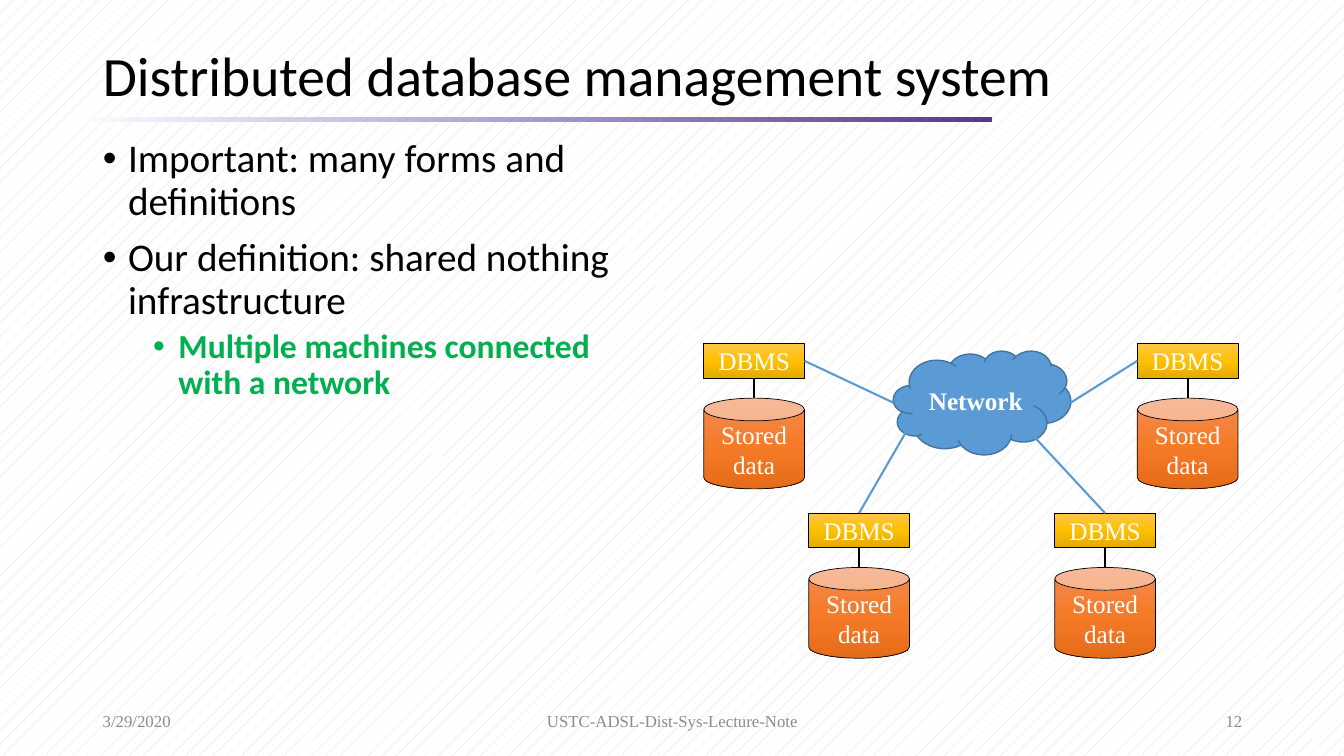
from dataclasses import dataclass

from lxml.etree import SubElement
from pptx import Presentation
from pptx.dml.color import RGBColor
from pptx.enum.dml import MSO_PATTERN
from pptx.enum.shapes import MSO_CONNECTOR, MSO_SHAPE
from pptx.enum.text import MSO_ANCHOR, MSO_AUTO_SIZE, PP_ALIGN
from pptx.oxml.ns import qn
from pptx.util import Inches, Pt

TITLE = "Distributed database management system"
BULLETS = [
    (0, "Important: many forms and definitions"),
    (0, "Our definition: shared nothing infrastructure"),
    (1, "Multiple machines connected with a network"),
]
FOOTERS = [
    ("3/29/2020", (6.9, 22.51), PP_ALIGN.LEFT),
    ("USTC-ADSL-Dist-Sys-Lecture-Note", (33.16, 33.76), PP_ALIGN.CENTER),
    ("12", (70.67, 22.51), PP_ALIGN.RIGHT),
]
FOOTER_ROW = (92.67, 5.33)
SERVER_NAME = ["DBMS"]
STORE_NAME = ["Stored", "data"]
CLOUD_NAME = ["Network"]

TITLE_BOX = (6.9, 5.33, 86.27, 10)
RULE_BOX = (6.9, 15.47, 66.92, 0.67)
BODY_BOX = (6.9, 17.73, 42.54, 72.4)
CLOUD_BOX = (66.47, 46.4, 13.2, 13.73)
MACHINE_WIDTH, SERVER_HEIGHT, GAP, STORE_HEIGHT = 7.5, 4.53, 2.67, 12
UPPER_ROW, LOWER_ROW = 45.47, 67.87
TOP, LEFT, RIGHT = 0, 1, 3
MACHINES = [
    {"at": (52.36, UPPER_ROW), "side": RIGHT, "cloud_end": (0, 0.5)},
    {"at": (60.17, LOWER_ROW), "side": TOP, "cloud_end": (0.14, 0.58)},
    {"at": (84.62, UPPER_ROW), "side": LEFT, "cloud_end": (1, 0.5)},
    {"at": (78.47, LOWER_ROW), "side": TOP, "cloud_end": (0.67, 0.6)},
]


@dataclass(frozen=True)
class Theme:
    heading: str = "Calibri"
    label: str = "Times New Roman"
    title_size: float = 39.6
    body_sizes: tuple = (28, 24)
    label_size: float = 18
    footer_size: float = 12
    ink: str = "000000"
    paper: str = "FFFFFF"
    hatch: str = "D9D9D9"
    muted: str = "8C8C8C"
    accent: str = "00B050"
    network: str = "5B9BD5"
    network_edge: str = "43739E"
    rule: tuple = ((0, "F7FAFD"), (100, "543795"))
    server: tuple = ((0, "FFC64B"), (50, "FFC000"), (100, "E3AB00"))
    store: tuple = ((0, "F18C57"), (50, "F67B28"), (100, "E56C19"))


THEME = Theme()
presentation = Presentation()
presentation.slide_width, presentation.slide_height = Inches(13.33), Inches(7.5)
slide = presentation.slides.add_slide(presentation.slide_layouts[1])


def rgb(value):
    return RGBColor.from_string(value)


def across(share):
    return round(presentation.slide_width * share / 100)


def down(share):
    return round(presentation.slide_height * share / 100)


def place(box):
    left, top, width, height = box
    return across(left), down(top), across(width), down(height)


def apply(target, formats):
    for name, value in formats.items():
        setattr(target, name, value)


def set_font(paragraph, family, size, color, bold=False):
    apply(paragraph.font, {"name": family, "size": Pt(size), "bold": bold})
    paragraph.font.color.rgb = rgb(color)


def set_frame(frame, anchor):
    apply(frame, {"word_wrap": True, "auto_size": MSO_AUTO_SIZE.NONE, "vertical_anchor": anchor})


def move(shape, box):
    apply(shape, dict(zip(("left", "top", "width", "height"), place(box))))


def fill_gradient(shape, stops, angle):
    shape.fill.gradient()
    shape.fill.gradient_angle = angle
    stop_list = shape._element.spPr.find(qn("a:gradFill")).find(qn("a:gsLst"))
    for stop in list(stop_list):
        stop_list.remove(stop)
    for position, color in stops:
        stop = SubElement(stop_list, qn("a:gs"), pos=str(position * 1000))
        SubElement(stop, qn("a:srgbClr"), val=color)


def add_figure(shapes, kind, box, lines, edge, weight, bold=False):
    shape = shapes.add_shape(kind, *place(box))
    shape.shadow.inherit = False
    shape.line.color.rgb = rgb(edge)
    shape.line.width = Pt(weight)
    set_frame(shape.text_frame, MSO_ANCHOR.MIDDLE)
    shape.text_frame.text = "\n".join(lines)
    for paragraph in shape.text_frame.paragraphs:
        paragraph.alignment = PP_ALIGN.CENTER
        set_font(paragraph, THEME.label, THEME.label_size, THEME.paper, bold)
    return shape


def add_line(shapes, start, end, color):
    connector = shapes.add_connector(MSO_CONNECTOR.STRAIGHT, *start, *end)
    connector.line.color.rgb = rgb(color)
    connector.line.width = Pt(1.5)
    SubElement(connector._element.spPr, qn("a:effectLst"))
    return connector


def add_machine(left, top):
    shapes = slide.shapes.add_group_shape().shapes
    store_top = top + SERVER_HEIGHT + GAP
    store = add_figure(shapes, MSO_SHAPE.CAN, (left, store_top, MACHINE_WIDTH, STORE_HEIGHT),
                       STORE_NAME, THEME.ink, 0.5)
    fill_gradient(store, THEME.store, 270)
    server = add_figure(shapes, MSO_SHAPE.RECTANGLE, (left, top, MACHINE_WIDTH, SERVER_HEIGHT),
                        SERVER_NAME, THEME.ink, 0.5)
    fill_gradient(server, THEME.server, 270)
    middle = across(left + MACHINE_WIDTH / 2)
    stem = add_line(shapes, (middle, down(top + SERVER_HEIGHT)), (middle, down(store_top)), THEME.ink)
    stem.begin_connect(server, 2)
    return server


def add_bullet(paragraph, level, text):
    paragraph.text = text
    paragraph.level = level
    properties = paragraph._p.get_or_add_pPr()
    properties.set("marL", str(Inches(0.25 + 0.5 * level)))
    properties.set("indent", str(Inches(-0.25)))
    SubElement(properties, qn("a:buFont"), typeface="Arial")
    SubElement(properties, qn("a:buChar"), char="•")
    color = THEME.accent if level else THEME.ink
    set_font(paragraph, THEME.heading, THEME.body_sizes[level], color, bool(level))


background = slide.background.fill
background.patterned()
background.pattern = MSO_PATTERN.PERCENT_5
background.fore_color.rgb = rgb(THEME.hatch)
background.back_color.rgb = rgb(THEME.paper)

rule = slide.shapes.add_shape(MSO_SHAPE.RECTANGLE, *place(RULE_BOX))
rule.shadow.inherit = False
rule.line.fill.background()
fill_gradient(rule, THEME.rule, 0)

title = slide.shapes.title
move(title, TITLE_BOX)
set_frame(title.text_frame, MSO_ANCHOR.MIDDLE)
title.text_frame.text = TITLE
heading = title.text_frame.paragraphs[0]
apply(heading, {"alignment": PP_ALIGN.LEFT, "line_spacing": 0.9})
set_font(heading, THEME.heading, THEME.title_size, THEME.ink)

body = slide.placeholders[1]
move(body, BODY_BOX)
set_frame(body.text_frame, MSO_ANCHOR.TOP)
for index, (level, text) in enumerate(BULLETS):
    paragraph = body.text_frame.add_paragraph() if index else body.text_frame.paragraphs[0]
    add_bullet(paragraph, level, text)
    space = (5 if level else 10) if index else 0
    apply(paragraph, {"line_spacing": 0.9, "space_before": Pt(space)})

cloud = add_figure(slide.shapes, MSO_SHAPE.CLOUD, CLOUD_BOX, CLOUD_NAME, THEME.network_edge, 1, True)
cloud.fill.solid()
cloud.fill.fore_color.rgb = rgb(THEME.network)

servers = [add_machine(*machine["at"]) for machine in MACHINES]
for machine, server in zip(MACHINES, servers):
    share_x, share_y = machine["cloud_end"]
    end = (round(cloud.left + cloud.width * share_x), round(cloud.top + cloud.height * share_y))
    link = add_line(slide.shapes, (server.left, server.top), end, THEME.network)
    link.begin_connect(server, machine["side"])

for text, (left, width), alignment in FOOTERS:
    top, height = FOOTER_ROW
    footer = slide.shapes.add_textbox(*place((left, top, width, height)))
    set_frame(footer.text_frame, MSO_ANCHOR.MIDDLE)
    footer.text_frame.text = text
    paragraph = footer.text_frame.paragraphs[0]
    paragraph.alignment = alignment
    set_font(paragraph, THEME.label, THEME.footer_size, THEME.muted)

presentation.save("out.pptx")
